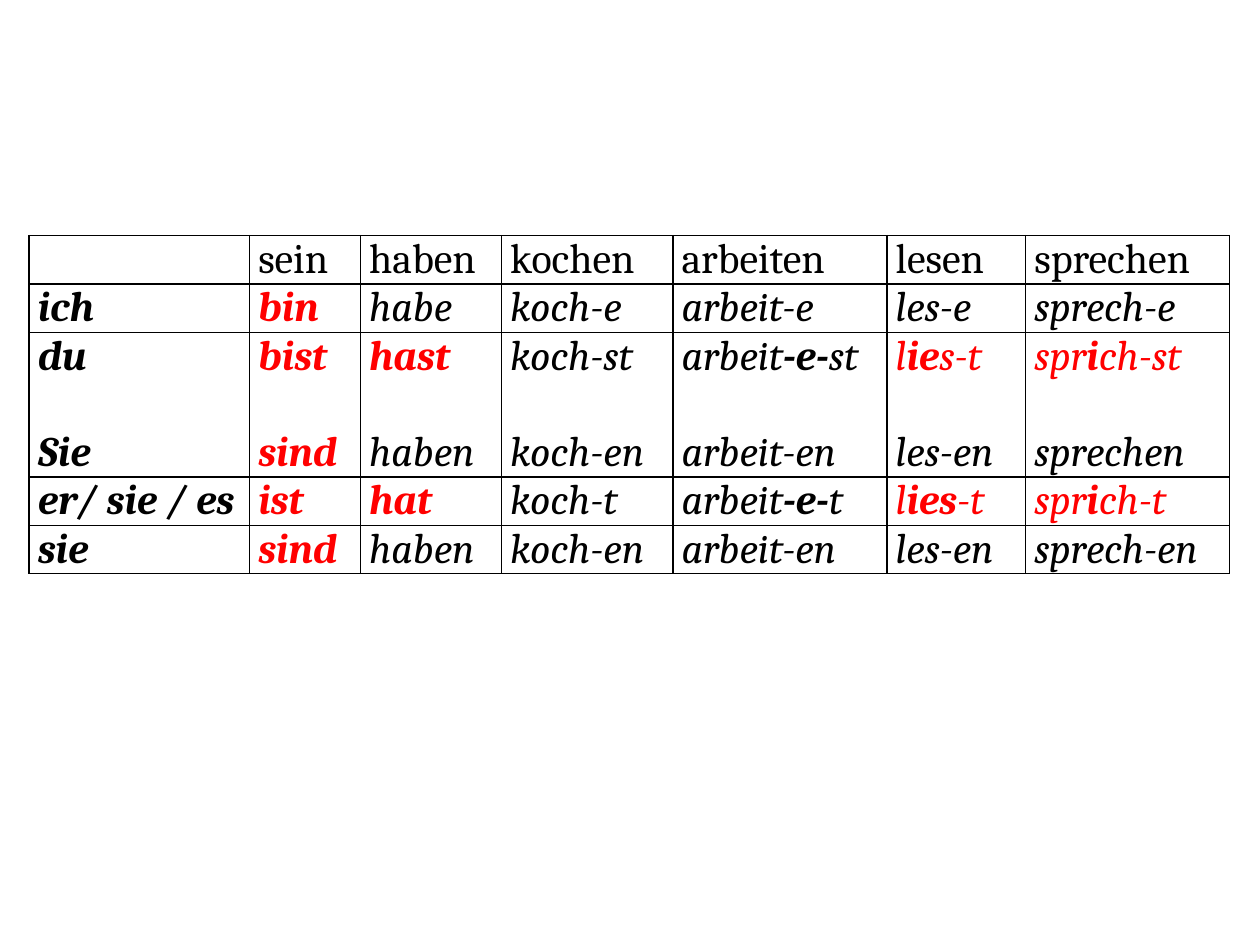
from dataclasses import dataclass

from lxml.etree import SubElement
from pptx import Presentation
from pptx.dml.color import RGBColor
from pptx.enum.text import PP_ALIGN as Align
from pptx.oxml.ns import qn
from pptx.util import Inches, Pt


@dataclass(frozen=True)
class Theme:
    font: str = "Cambria"
    size: Pt = Pt(24)
    line_height: float = 0.38
    text: RGBColor = RGBColor(0, 0, 0)
    irregular: RGBColor = RGBColor(255, 0, 0)
    border: str = "000000"
    border_width: Pt = Pt(1)


THEME = Theme()
COLUMN_WIDTHS = [1.75, 0.88, 1.12, 1.36, 1.7, 1.1, 1.62]

# "!" marks an irregular form, asterisks enclose bold letters, "|" parts paragraphs.
VERB_FORMS = [
    ["", "sein", "haben", "kochen", "arbeiten", "lesen", "sprechen"],
    ["*ich*", "!*bin*", "habe", "koch-e", "arbeit-e", "les-e", "sprech-e"],
    ["*du*|*Sie*", "!*bist*|!*sind*", "!*hast*|haben", "koch-st|koch-en",
     "arbeit*-e-*st|arbeit-en", "!l*ie*s-t|les-en", "!spr*i*ch-st|sprechen"],
    ["*er/ sie / es*", "!*ist*", "!*hat*", "koch-t", "arbeit*-e-*t",
     "!l*ies*-t", "!spr*i*ch-t"],
    ["*sie*", "!*sind*", "haben", "koch-en", "arbeit-en", "les-en", "sprech-en"],
]


def write_form(para, form, italic):
    para.alignment = Align.JUSTIFY
    para.font.name = THEME.font
    para.font.size = THEME.size
    para.font.italic = italic
    para.font.color.rgb = THEME.irregular if form.startswith("!") else THEME.text
    for index, letters in enumerate(form.removeprefix("!").split("*")):
        if letters:
            span = para.add_run()
            span.text = letters
            span.font.bold = index % 2 == 1


def draw_borders(cell):
    properties = cell._tc.get_or_add_tcPr()
    for side in ("a:lnL", "a:lnR", "a:lnT", "a:lnB"):
        line = SubElement(properties, qn(side), w=str(THEME.border_width))
        fill = SubElement(line, qn("a:solidFill"))
        SubElement(fill, qn("a:srgbClr"), val=THEME.border)


def fill_cell(cell, content, italic):
    """Style a cell and write its forms with one empty line's space between them."""
    draw_borders(cell)
    cell.fill.background()
    cell.margin_left = cell.margin_right = Inches(0.07)
    cell.margin_top = cell.margin_bottom = 0
    frame = cell.text_frame
    for index, form in enumerate(content.split("|")):
        para = frame.add_paragraph() if index else frame.paragraphs[0]
        if index:
            para.space_before = Inches(THEME.line_height)
        write_form(para, form, italic)


def add_verb_table(page):
    line_counts = [2 * row[0].count("|") + 1 for row in VERB_FORMS]
    table = page.shapes.add_table(
        len(VERB_FORMS), len(COLUMN_WIDTHS), Inches(0.23), Inches(1.87),
        Inches(sum(COLUMN_WIDTHS)), Inches(THEME.line_height * sum(line_counts)),
    ).table
    table.first_row = table.horz_banding = False
    for column, width in zip(table.columns, COLUMN_WIDTHS):
        column.width = Inches(width)
    for index, (row, forms) in enumerate(zip(table.rows, VERB_FORMS)):
        row.height = Inches(THEME.line_height * line_counts[index])
        for cell, content in zip(row.cells, forms):
            fill_cell(cell, content, italic=index > 0)


def main():
    deck = Presentation()
    deck.slide_width, deck.slide_height = Inches(10), Inches(7.5)
    page = deck.slides.add_slide(deck.slide_layouts[6])
    add_verb_table(page)
    deck.save("out.pptx")


if __name__ == "__main__":
    main()
